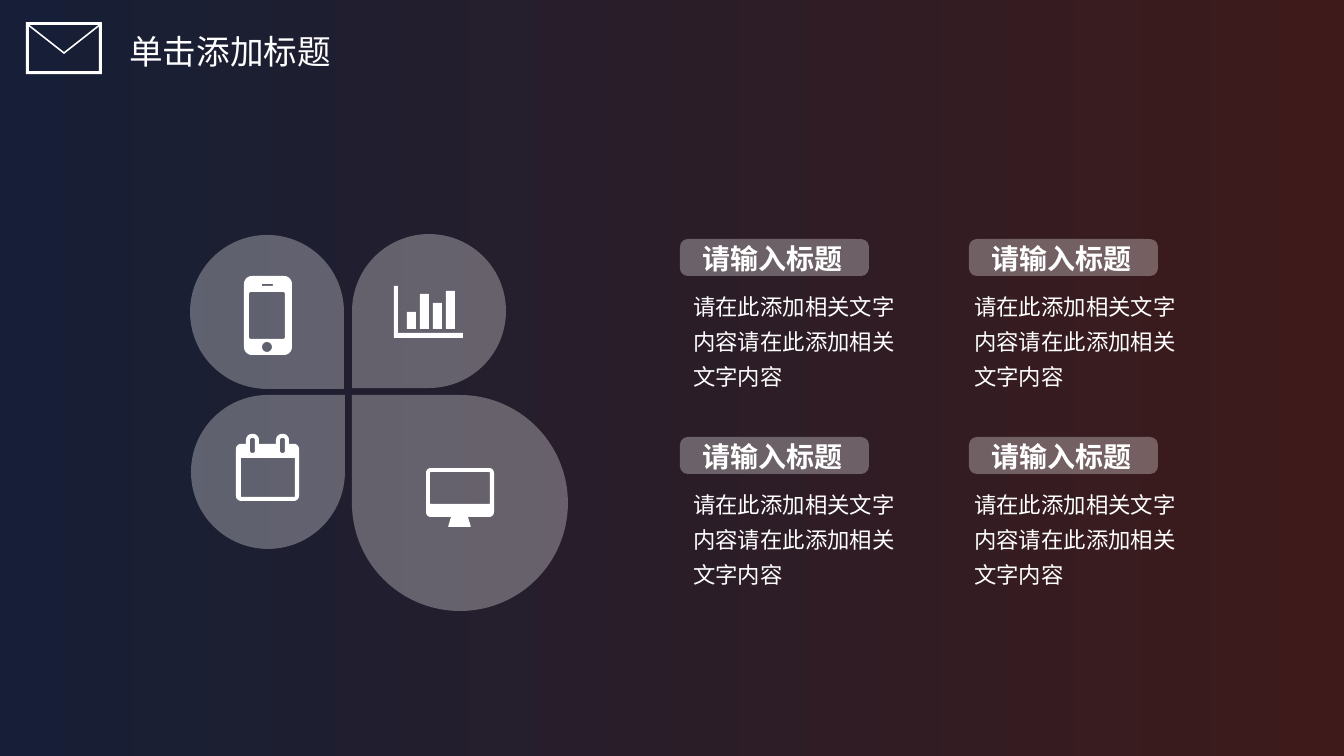
from math import dist, sqrt

from lxml import etree
from pptx import Presentation
from pptx.dml.color import RGBColor
from pptx.enum.shapes import MSO_SHAPE
from pptx.oxml.ns import qn
from pptx.util import Emu, Pt

EMU_PER_PX = 914400 / 134.4
WIDTH, HEIGHT = 1344, 756

WHITE = RGBColor(0xFF, 0xFF, 0xFF)
NAVY = RGBColor(0x16, 0x1F, 0x37)
MAROON = RGBColor(0x3E, 0x1B, 0x1A)
FONT = "Noto Sans CJK SC"
GLASS_ALPHA = 30

TEARDROP = MSO_SHAPE.TEAR
ROUND_RECTANGLE = MSO_SHAPE.ROUNDED_RECTANGLE

TITLE = "单击添加标题"
HEADING = "请输入标题"
BODY = "请在此添加相关文字内容请在此添加相关文字内容"


def px(length):
    return Emu(round(length * EMU_PER_PX))


def toward(start, end, length):
    share = length / dist(start, end)
    return tuple(a + (b - a) * share for a, b in zip(start, end))


def rounded(corners, steps=8):
    """Outline through (x, y, radius) corners, each right angle cut by a circular arc."""
    outline = []
    for index, (x, y, radius) in enumerate(corners):
        corner = (x, y)
        if not radius:
            outline.append(corner)
            continue
        start = toward(corner, corners[index - 1][:2], radius)
        end = toward(corner, corners[(index + 1) % len(corners)][:2], radius)
        for step in range(steps + 1):
            t = step / steps
            weights = ((1 - t) ** 2, sqrt(2) * t * (1 - t), t ** 2)
            outline.append(tuple(
                sum(w * v for w, v in zip(weights, values)) / sum(weights)
                for values in zip(start, corner, end)))
    return outline


def rectangle(left, top, right, bottom, radius=0):
    return rounded([(left, top, radius), (right, top, radius),
                    (right, bottom, radius), (left, bottom, radius)])


class SlideBuilder:
    """Holds the slide and the shared white style."""

    def __init__(self, slide):
        self.slide = slide
        self.shapes = slide.shapes

    def background(self, first, last):
        fill = self.slide.background.fill
        fill.gradient()
        fill.gradient_angle = 0
        for stop, color in zip(fill.gradient_stops, (first, last)):
            stop.color.rgb = color

    def paint(self, shape, alpha=None):
        shape.shadow.inherit = False
        shape.fill.solid()
        shape.fill.fore_color.rgb = WHITE
        shape.line.fill.background()
        if alpha:
            color = shape._element.spPr.find(".//" + qn("a:srgbClr"))
            etree.SubElement(color, qn("a:alpha")).set("val", str(alpha * 1000))

    def glass(self, kind, left, top, width, height, rotation=0):
        shape = self.shapes.add_shape(kind, px(left), px(top), px(width), px(height))
        shape.rotation = rotation
        self.paint(shape, GLASS_ALPHA)
        return shape

    def icon(self, *outlines):
        """One white freeform; outlines inside others become holes."""
        first, *others = [[(px(x), px(y)) for x, y in outline] for outline in outlines]
        builder = self.shapes.build_freeform(*first[0])
        builder.add_line_segments(first[1:], close=True)
        for outline in others:
            builder.move_to(*outline[0])
            builder.add_line_segments(outline[1:], close=True)
        self.paint(builder.convert_to_shape())

    def text(self, words, left, top, width, height, size, bold=False, spacing=None):
        box = self.shapes.add_textbox(px(left), px(top), px(width), px(height))
        box.text_frame.word_wrap = True
        para = box.text_frame.paragraphs[0]
        para.line_spacing = spacing
        span = para.add_run()
        span.text = words
        span.font.size = Pt(size)
        span.font.bold = bold
        span.font.color.rgb = WHITE
        span.font.name = FONT
        east_asian = etree.SubElement(span.font._element, qn("a:ea"))
        east_asian.set("typeface", FONT)

    def card(self, pill_left, body_left, top):
        pill = self.glass(ROUND_RECTANGLE, pill_left, top, 189, 37)
        pill.adjustments[0] = 0.21
        self.text(HEADING, pill_left + 9, top - 4, 170, 47, 15, bold=True)
        self.text(BODY, body_left, top + 40, 229, 120, 12, spacing=1.3)


def draw_envelope(page):
    page.icon(rectangle(26, 22, 102, 74), rectangle(29, 25, 99, 71))
    for edge in (27, 101):
        page.icon([(edge, 23), (64, 52), (64, 54), (edge, 25)])


def draw_petals(page):
    for left, top, size, rotation in ((352, 395, 216, 270), (352, 234, 154, 180),
                                      (191, 395, 154, 0), (190, 235, 154, 90)):
        page.glass(TEARDROP, left, top, size, size, rotation)


def draw_calendar(page):
    tabs = (246, 276)
    top_edge = [corner for left in tabs
                for corner in ((left, 444, 0), (left, 434, 6),
                               (left + 13, 434, 6), (left + 13, 444, 0))]
    page.icon(
        rounded([(236, 444, 5), *top_edge, (299, 444, 5), (299, 501, 5), (236, 501, 5)]),
        rectangle(241, 458, 295, 497),
        *[rectangle(left + 4, 438, left + 9, 453, 2) for left in tabs])


def draw_monitor(page):
    page.icon(
        rounded([(426, 468, 5), (494, 468, 5), (494, 517, 5), (468, 517, 0),
                 (471, 527, 1), (448, 527, 1), (451, 517, 0), (426, 517, 5)]),
        rectangle(430, 472, 490, 504, 1))


def draw_bar_chart_icon(page):
    bar_tops = (312, 294, 303, 291)
    page.icon(
        [(394, 286), (398, 286), (398, 333), (463, 333), (463, 338), (394, 338)],
        *[rectangle(407 + 13 * index, top, 416 + 13 * index, 329)
          for index, top in enumerate(bar_tops)])


def draw_phone(page):
    page.icon(
        rectangle(244, 276, 292, 355, 8), rectangle(249, 292, 285, 339, 2),
        rectangle(262, 284, 273, 286), rectangle(262, 342, 272, 352, 5))


def main():
    deck = Presentation()
    deck.slide_width, deck.slide_height = px(WIDTH), px(HEIGHT)
    page = SlideBuilder(deck.slides.add_slide(deck.slide_layouts[6]))
    page.background(NAVY, MAROON)
    draw_envelope(page)
    page.text(TITLE, 116, 24, 290, 54, 18)
    draw_petals(page)
    draw_calendar(page)
    draw_monitor(page)
    draw_bar_chart_icon(page)
    draw_phone(page)
    for top in (239, 437):
        for pill_left, body_left in ((680, 680), (969, 961)):
            page.card(pill_left, body_left, top)
    deck.save("out.pptx")


if __name__ == "__main__":
    main()
